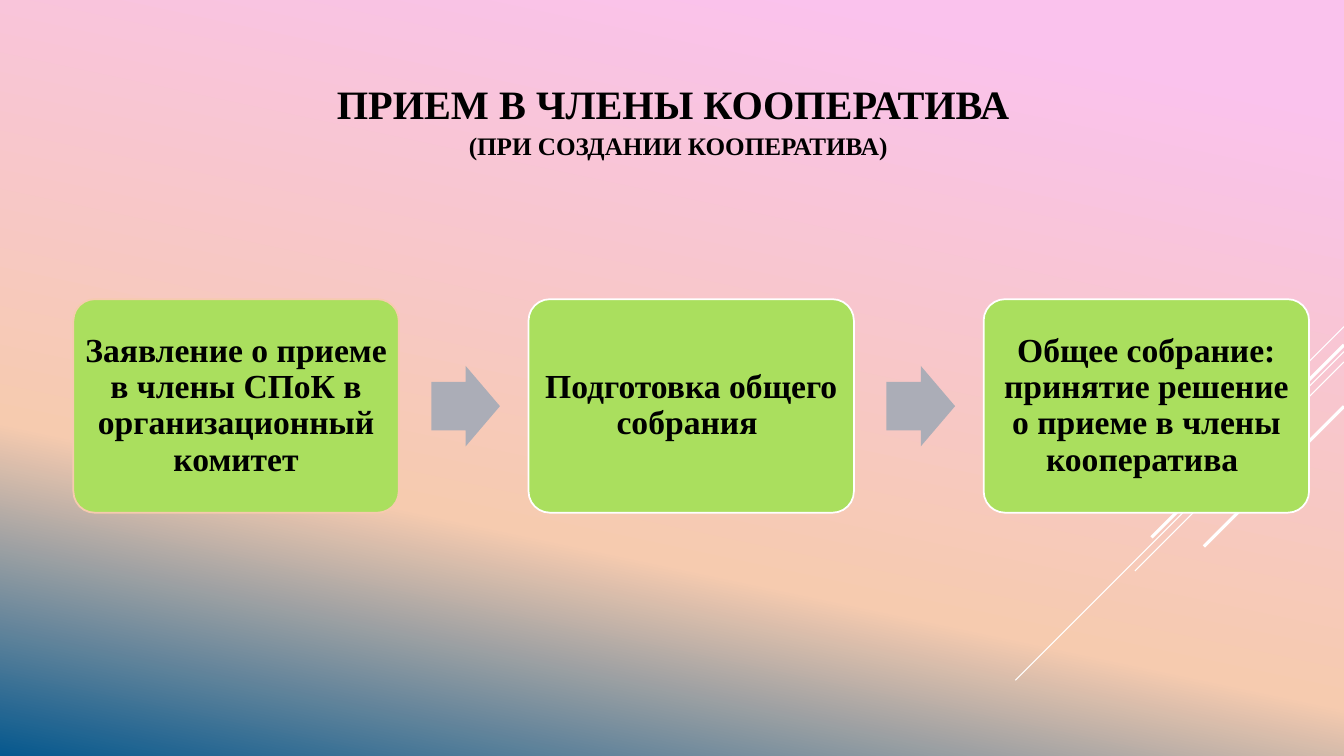
"""Build a slide on admission to a cooperative: a title and three linked steps."""
from copy import deepcopy
from dataclasses import dataclass

from lxml.etree import SubElement
from pptx import Presentation
from pptx.dml.color import RGBColor as Rgb
from pptx.enum.shapes import MSO_CONNECTOR as Link, MSO_SHAPE as Kind
from pptx.enum.text import MSO_ANCHOR as Anchor, PP_ALIGN as Align
from pptx.oxml.ns import qn
from pptx.util import Cm, Pt


@dataclass(frozen=True)
class Theme:
    font: str = "Times New Roman"
    ink: str = "000000"
    white: str = "FFFFFF"
    peach: str = "F6CBAF"
    pink: str = "FAC2ED"
    blue: str = "06588E"
    green: str = "AADF5E"
    gray: str = "ABADB7"
    head: float = 28.8
    sub: float = 18
    body: float = 24


theme = Theme()


def write(shape, text, sizes, gap, inset):
    frame = shape.text_frame
    frame.word_wrap = True
    frame.vertical_anchor = Anchor.MIDDLE
    frame.margin_left = frame.margin_right = Cm(inset)
    frame.margin_top = frame.margin_bottom = Cm(inset)
    frame.text = text
    par = frame.paragraphs[0]
    par.alignment = Align.CENTER
    par.line_spacing = gap
    for run, size in zip(par.runs, sizes):
        run.font.name = theme.font
        run.font.size = Pt(size)
        run.font.bold = True
        run.font.color.rgb = Rgb.from_string(theme.ink)


def draw(kind, left, top, width, height, color):
    shape = slide.shapes.add_shape(kind, Cm(left), Cm(top), Cm(width), Cm(height))
    shape.shadow.inherit = False
    shape.fill.solid()
    shape.fill.fore_color.rgb = Rgb.from_string(color)
    shape.line.fill.background()
    return shape


deck = Presentation()
wide, high = 33.87, 19.05
deck.slide_width, deck.slide_height = Cm(wide), Cm(high)
slide = deck.slides.add_slide(deck.slide_layouts[6])

fill = slide.background.fill
fill.gradient()
fill.gradient_angle = 258
last = slide.element.findall(".//" + qn("a:gs"))[-1]
last.addnext(deepcopy(last))
shades = [(0.1, theme.pink), (0.68, theme.peach), (1, theme.blue)]
for stop, (place, color) in zip(fill.gradient_stops, shades):
    stop.position = place
    stop.color.rgb = Rgb.from_string(color)

rays = [(8.23, 2.54, 0.75), (8.86, 8.28, 0.75), (9.12, 5.27, 0.75),
        (8.69, 4.85, 2.25), (10.24, 3.53, 2.25)]
for top, reach, weight in rays:
    ray = slide.shapes.add_connector(
        Link.STRAIGHT, Cm(wide), Cm(top), Cm(wide - reach), Cm(top + reach))
    ray.line.color.rgb = Rgb.from_string(theme.white)
    ray.line.width = Pt(weight)
    SubElement(ray.element.spPr, qn("a:effectLst"))

title = slide.shapes.add_textbox(Cm(1.17), Cm(1.9), Cm(31.85), Cm(2.13))
write(title, "ПРИЕМ В ЧЛЕНЫ КООПЕРАТИВА \v(ПРИ СОЗДАНИИ КООПЕРАТИВА)",
      [theme.head, theme.sub], 1.1, 0.13)

steps = [
    ("Заявление о приеме в члены СПоК в организационный комитет", theme.peach),
    ("Подготовка общего собрания ", theme.white),
    ("Общее собрание: принятие решение о приеме в члены кооператива ", theme.white),
]
start, pitch = 1.85, 11.47
for i, (text, edge) in enumerate(steps):
    left = start + i * pitch
    if i:
        arrow = draw(Kind.RIGHT_ARROW, left - 2.45, 9.22, 1.73, 2.03, theme.gray)
        arrow.adjustments[0] = 0.6
        arrow.adjustments[1] = 0.5
    box = draw(Kind.ROUNDED_RECTANGLE, left, 7.54, 8.2, 5.38, theme.green)
    box.adjustments[0] = 0.1
    box.line.color.rgb = Rgb.from_string(edge)
    box.line.width = Pt(1.25)
    write(box, text, [theme.body], 0.9, 0.1)

deck.save("out.pptx")
